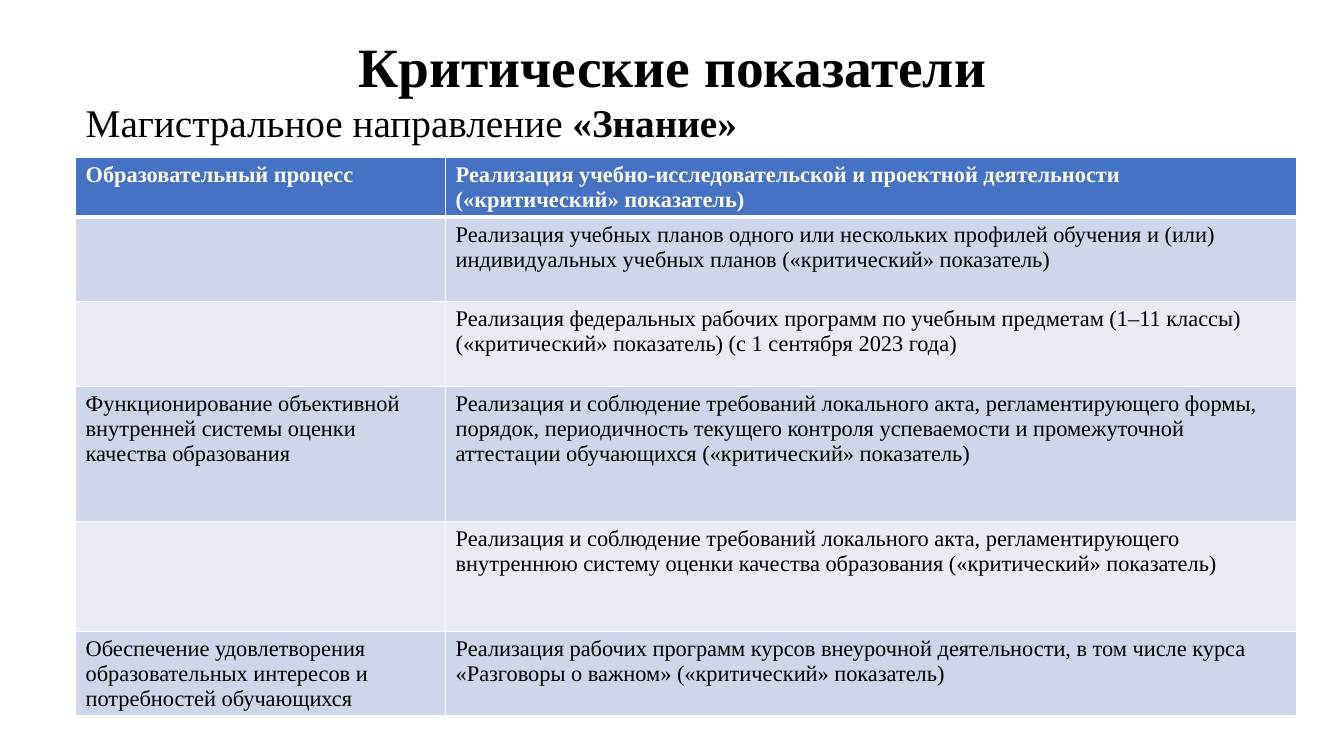
from pptx import Presentation
from pptx.dml.color import RGBColor
from pptx.enum.text import MSO_ANCHOR, MSO_AUTO_SIZE, PP_ALIGN
from pptx.oxml.ns import qn
from pptx.util import Inches, Pt
from lxml import etree

CENTER, LEFT = PP_ALIGN.CENTER, PP_ALIGN.LEFT
TOP, MIDDLE = MSO_ANCHOR.TOP, MSO_ANCHOR.MIDDLE
NO_AUTOFIT = MSO_AUTO_SIZE.NONE

FONT = "Times New Roman"
COLORS = {
    "text": "000000",
    "header_text": "FFFFFF",
    "header": "4472C4",
    "odd_row": "CFD5EA",
    "even_row": "E9EBF5",
    "border": "FFFFFF",
}

HEADING = "Критические показатели"
DIRECTION = [("Магистральное направление ", False), ("«Знание»", True)]
INDICATORS = [
    ("Образовательный процесс",
     "Реализация учебно-исследовательской и проектной деятельности "
     "(«критический» показатель)"),
    ("",
     "Реализация учебных планов одного или нескольких профилей обучения и (или) "
     "индивидуальных учебных планов («критический» показатель)"),
    ("",
     "Реализация федеральных рабочих программ по учебным предметам (1‒11 классы) "
     "(«критический» показатель) (с 1 сентября 2023 года)"),
    ("Функционирование объективной внутренней системы оценки качества образования",
     "Реализация и соблюдение требований локального акта, регламентирующего формы, "
     "порядок, периодичность текущего контроля успеваемости и промежуточной "
     "аттестации обучающихся («критический» показатель)"),
    ("",
     "Реализация и соблюдение требований локального акта, регламентирующего "
     "внутреннюю систему оценки качества образования («критический» показатель)"),
    ("Обеспечение удовлетворения образовательных интересов и потребностей обучающихся",
     "Реализация рабочих программ курсов внеурочной деятельности, в том числе курса "
     "«Разговоры о важном» («критический» показатель)"),
]

SLIDE_SIZE = (13.33, 7.5)
HEADING_BOX = (0.92, 0.4, 11.5, 0.58)
DIRECTION_BOX = (0.75, 0.98, 11.67, 5.77)
TABLE_ORIGIN = (0.75, 1.56)
COLUMN_WIDTHS = (3.67, 8.44)
ROW_HEIGHTS = (0.59, 0.84, 0.84, 1.34, 1.09, 0.84)


def write(frame, runs, size, color="text", align=LEFT, spacing=None, before=None):
    """Fill the first paragraph with (text, bold) runs."""
    paragraph = frame.paragraphs[0]
    paragraph.alignment = align
    paragraph.line_spacing = spacing
    paragraph.space_before = before
    for text, bold in runs:
        run = paragraph.add_run()
        run.text = text
        run.font.name = FONT
        run.font.size = Pt(size)
        run.font.bold = bold
        run.font.color.rgb = RGBColor.from_string(COLORS[color])
    return paragraph


def place(placeholder, box, anchor):
    placeholder.left, placeholder.top, placeholder.width, placeholder.height = map(Inches, box)
    frame = placeholder.text_frame
    frame.word_wrap = True
    frame.auto_size = NO_AUTOFIT
    frame.vertical_anchor = anchor
    return frame


def remove_bullet(paragraph):
    properties = paragraph._p.get_or_add_pPr()
    properties.set("marL", "0")
    properties.set("indent", "0")
    etree.SubElement(properties, qn("a:buNone"))


def set_borders(cell, **widths):
    """Draw cell edges; widths in points, keyed L, R, T, B."""
    properties = cell._tc.get_or_add_tcPr()
    for side, width in widths.items():
        line = etree.SubElement(properties, qn(f"a:ln{side}"), w=str(Pt(width)))
        fill = etree.SubElement(line, qn("a:solidFill"))
        etree.SubElement(fill, qn("a:srgbClr"), val=COLORS["border"])


def add_indicators(slide):
    table = slide.shapes.add_table(
        len(INDICATORS), len(COLUMN_WIDTHS), *map(Inches, TABLE_ORIGIN),
        Inches(sum(COLUMN_WIDTHS)), Inches(sum(ROW_HEIGHTS))).table
    for column, width in zip(table.columns, COLUMN_WIDTHS):
        column.width = Inches(width)
    for index, (entries, height) in enumerate(zip(INDICATORS, ROW_HEIGHTS)):
        table.rows[index].height = Inches(height)
        is_header = index == 0
        band = "header" if is_header else "odd_row" if index % 2 else "even_row"
        for column, entry in enumerate(entries):
            cell = table.cell(index, column)
            set_borders(cell, L=1, R=1, T=3 if index == 1 else 1, B=3 if is_header else 1)
            cell.fill.solid()
            cell.fill.fore_color.rgb = RGBColor.from_string(COLORS[band])
            if entry:
                write(cell.text_frame, [(entry, is_header)], 16,
                      color="header_text" if is_header else "text")


def main():
    deck = Presentation()
    deck.slide_width, deck.slide_height = map(Inches, SLIDE_SIZE)
    slide = deck.slides.add_slide(deck.slide_layouts[1])
    heading = place(slide.shapes.title, HEADING_BOX, MIDDLE)
    write(heading, [(HEADING, True)], 39.6, align=CENTER, spacing=0.9)
    direction = place(slide.placeholders[1], DIRECTION_BOX, TOP)
    remove_bullet(write(direction, DIRECTION, 28, spacing=0.9, before=Pt(10)))
    add_indicators(slide)
    deck.save("out.pptx")


if __name__ == "__main__":
    main()
